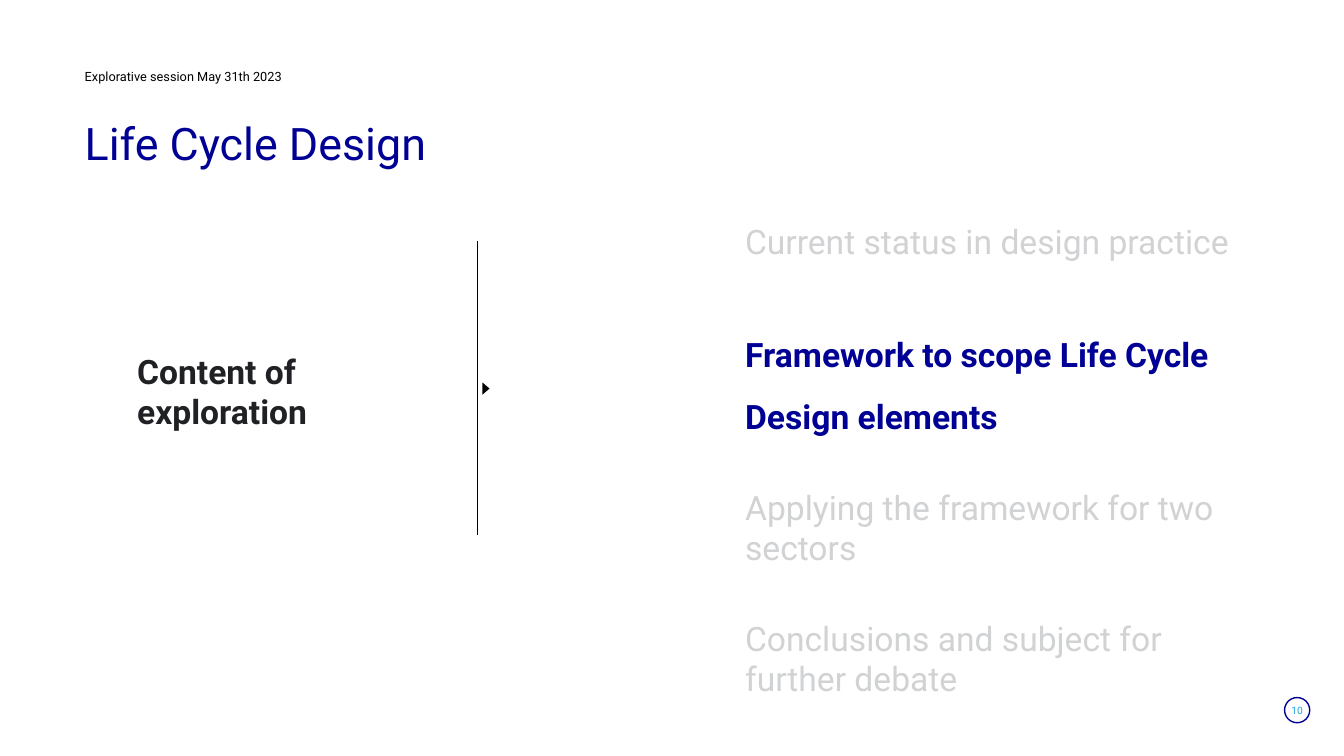
from lxml import etree
from pptx import Presentation, util as u
from pptx.dml.color import RGBColor
from pptx.enum import shapes, text
from pptx.oxml.ns import qn

PX = 9144  # EMU per px, 100 px to the inch
FONT = "Roboto"
COLORS = {"navy": "000095", "sky": "24A8E0", "black": "000000",
          "grey": "D1D2D4", "ink": "202124"}

SESSION = "Explorative session May 31th 2023"
TOPIC = "Life Cycle Design"
AGENDA_LABEL = "Content of exploration"
AGENDA = ["Current status in design practice",
          "Framework to scope Life Cycle Design elements",
          "Applying the framework for two sectors",
          "Conclusions and subject for further debate"]
CURRENT = 1
PAGE = "10"

# Boxes: left, top, width, height in px
SESSION_BOX = (84, 65, 1166, 24)
TOPIC_BOX = (84, 106, 1164, 96)
AGENDA_BOX = (739, 219, 511, 453)
LABEL_BOX = (136, 348, 241, 57)
PAGE_BOX = (1278, 700, 17, 13)
RING_BOX = (1274, 692, 25, 25)
POINTER_BOX = (476, 382, 12, 7)
DIVIDER = (474, 239, 474, 531)


def emu(lengths):
    return [n * PX for n in lengths]


def rgb(name):
    return RGBColor.from_string(COLORS[name])


def set_text(sp, lines, size, color, bold=False, spacing=1.0,
             align=text.PP_ALIGN.LEFT, anchor=text.MSO_ANCHOR.TOP):
    tf = sp.text_frame
    tf.text = "\n".join(lines)
    tf.word_wrap = True
    tf.auto_size = text.MSO_AUTO_SIZE.NONE
    tf.vertical_anchor = anchor
    tf.margin_left = tf.margin_top = tf.margin_right = tf.margin_bottom = 0
    for p in tf.paragraphs:
        p.alignment = align
        p.line_spacing = spacing
        p.font.name = FONT
        p.font.size = u.Pt(size)
        p.font.bold = bold
        p.font.color.rgb = rgb(color)
    return tf.paragraphs


def add_text(box, lines, size, color, **style):
    return set_text(slide.shapes.add_textbox(*emu(box)), lines, size, color, **style)


prs = Presentation()
prs.slide_width, prs.slide_height = emu((1333, 750))
slide = prs.slides.add_slide(prs.slide_layouts[5])

# Page number in a ring
add_text(PAGE_BOX, [PAGE], 7.3, "sky", spacing=0.9, align=text.PP_ALIGN.CENTER)
ring = slide.shapes.add_shape(shapes.MSO_SHAPE.OVAL, *emu(RING_BOX))
ring.shadow.inherit = False
ring.fill.background()
ring.line.color.rgb = rgb("navy")
ring.line.width = u.Pt(1)

# Headings
title = slide.shapes.title
title.left, title.top, title.width, title.height = emu(SESSION_BOX)
set_text(title, [SESSION], 9.1, "black", spacing=0.9, anchor=text.MSO_ANCHOR.MIDDLE)
add_text(TOPIC_BOX, [TOPIC], 32, "navy", spacing=1.16)

# Agenda with the current item highlighted
items = add_text(AGENDA_BOX, AGENDA, 24, "grey")
for p in items[1:]:
    p.space_before = u.Pt(36)
items[CURRENT].line_spacing = 1.55
items[CURRENT].font.bold = True
items[CURRENT].font.color.rgb = rgb("navy")

# Divider with its pointer
divider = slide.shapes.add_connector(shapes.MSO_CONNECTOR.STRAIGHT, *emu(DIVIDER))
divider.line.color.rgb = rgb("black")
divider.line.width = u.Pt(0.75)
etree.SubElement(divider._element.spPr, qn("a:effectLst"))
pointer = slide.shapes.add_shape(shapes.MSO_SHAPE.ISOSCELES_TRIANGLE, *emu(POINTER_BOX))
pointer.rotation = 90
pointer.shadow.inherit = False
pointer.fill.solid()
pointer.fill.fore_color.rgb = rgb("black")
pointer.line.fill.background()

# Agenda label
add_text(LABEL_BOX, [AGENDA_LABEL], 24, "ink", bold=True)

prs.save("out.pptx")
